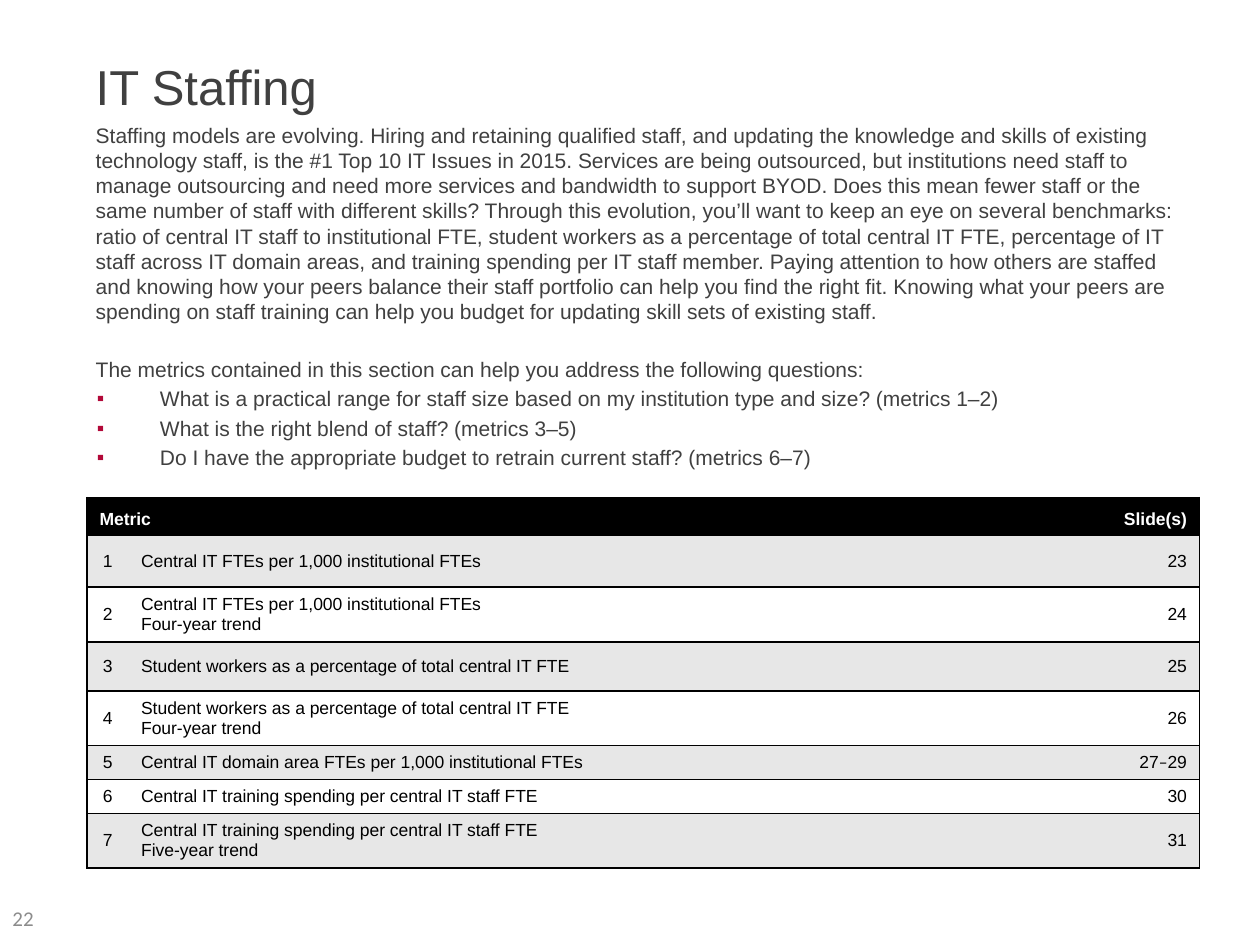
from lxml.etree import SubElement
from pptx import Presentation
from pptx.dml.color import RGBColor
from pptx.enum.text import MSO_ANCHOR as Anchor, MSO_AUTO_SIZE as AutoSize, PP_ALIGN as Align
from pptx.oxml import parse_xml
from pptx.oxml.ns import nsdecls, qn
from pptx.util import Inches, Pt


def add_run(paragraph, text, size, color, font="Arial", bold=False):
    run = paragraph.add_run()
    run.text = text
    run.font.size, run.font.name, run.font.bold = Pt(size), font, bold
    run.font.color.rgb = RGBColor.from_string(color)


def set_borders(cell, sides):
    properties = cell._tc.get_or_add_tcPr()
    for side in "LRTB":
        paint = '<a:solidFill><a:srgbClr val="000000"/></a:solidFill>' if side in sides else "<a:noFill/>"
        properties.append(parse_xml(f'<a:ln{side} {nsdecls("a")} w="{Pt(1)}">{paint}</a:ln{side}>'))


DARK, BLACK, WHITE, BAND = "404040", "000000", "FFFFFF", "E7E7E7"

presentation = Presentation()
presentation.slide_width, presentation.slide_height = Inches(10), Inches(7.5)
slide = presentation.slides.add_slide(presentation.slide_layouts[1])
title, body = slide.placeholders

# Title
title.left, title.top, title.width, title.height = map(Inches, (0.66, 0.37, 8.77, 0.63))
title.text_frame.auto_size = AutoSize.NONE
title.text_frame.vertical_anchor = Anchor.MIDDLE
title.text_frame.paragraphs[0].alignment = Align.LEFT
add_run(title.text_frame.paragraphs[0], "IT Staffing", 28, DARK)

# Body: two plain paragraphs, then the bulleted questions
body.left, body.top, body.width, body.height = map(Inches, (0.66, 0.92, 8.84, 5.31))
body.text_frame.auto_size = AutoSize.NONE
intro_sentences = [
    "Staffing models are evolving.",
    "Hiring and retaining qualified staff, and updating the knowledge and skills of existing "
    "technology staff, is the #1 Top 10 IT Issues in 2015.",
    "Services are being outsourced, but institutions need staff to manage outsourcing and need "
    "more services and bandwidth to support BYOD.",
    "Does this mean fewer staff or the same number of staff with different skills?",
    "Through this evolution, you’ll want to keep an eye on several benchmarks: ratio of central IT "
    "staff to institutional FTE, student workers as a percentage of total central IT FTE, percentage "
    "of IT staff across IT domain areas, and training spending per IT staff member.",
    "Paying attention to how others are staffed and knowing how your peers balance their staff "
    "portfolio can help you find the right fit.",
    "Knowing what your peers are spending on staff training can help you budget for updating "
    "skill sets of existing staff.",
]
body_paragraphs = [  # text, space before, bulleted
    (" ".join(intro_sentences), 0, False),
    ("The metrics contained in this section can help you address the following questions:", 18.6, False),
    ("What is a practical range for staff size based on my institution type and size? (metrics 1–2)", 2.4, True),
    ("What is the right blend of staff? (metrics 3–5)", 2.4, True),
    ("Do I have the appropriate budget to retrain current staff? (metrics 6–7)", 2.4, True),
]
for index, (text, space, bulleted) in enumerate(body_paragraphs):
    paragraph = body.text_frame.paragraphs[0] if index == 0 else body.text_frame.add_paragraph()
    paragraph.space_before = Pt(space)
    properties = paragraph._p.get_or_add_pPr()
    properties.set("marL", str(Inches(0.51 if bulleted else 0)))
    properties.set("indent", str(Inches(-0.5 if bulleted else 0)))
    if bulleted:
        bullet_color = SubElement(properties, qn("a:buClr"))
        SubElement(bullet_color, qn("a:srgbClr"), val="B20838")
        SubElement(properties, qn("a:buFont"), typeface="Arial")
        SubElement(properties, qn("a:buChar"), char="▪")
    else:
        SubElement(properties, qn("a:buNone"))
    add_run(paragraph, text, 12, DARK)

# Slide number
number_box = slide.shapes.add_textbox(0, Inches(7.08), Inches(1.08), Inches(0.42))
number_box.text_frame.word_wrap = True
number_box.text_frame.vertical_anchor = Anchor.MIDDLE
add_run(number_box.text_frame.paragraphs[0], "22", 12, "8C8C8C", "Calibri")

# Metrics table
central = "Central IT FTEs per 1,000 institutional FTEs"
students = "Student workers as a percentage of total central IT FTE"
training = "Central IT training spending per central IT staff FTE"
metrics = [  # description lines, slides, row height
    ([central], "23", 0.41),
    ([central, "Four-year trend"], "24", 0.41),
    ([students], "25", 0.39),
    ([students, "Four-year trend"], "26", 0.41),
    (["Central IT domain area FTEs per 1,000 institutional FTEs"], "27–29", 0.27),
    ([training], "30", 0.26),
    ([training, "Five-year trend"], "31", 0.41),
]
rows = [(["Metric"], [], ["Slide(s)"], 0.3)]
rows += [([str(number)], lines, [slides], height)
         for number, (lines, slides, height) in enumerate(metrics, 1)]
columns = [0.33, 7.78, 0.72]
table = slide.shapes.add_table(len(rows), len(columns), Inches(0.69), Inches(3.95),
                               Inches(sum(columns)), Inches(sum(row[-1] for row in rows))).table
for column, width in zip(table.columns, columns):
    column.width = Inches(width)
table.cell(0, 0).merge(table.cell(0, 1))

for row_index, (*contents, height) in enumerate(rows):
    header = row_index == 0
    table.rows[row_index].height = Inches(height)
    for column_index, lines in enumerate(contents):
        cell = table.cell(row_index, column_index)
        set_borders(cell, ("LTB", "TB", "RTB")[column_index])
        cell.fill.solid()
        fill = BLACK if header else BAND if row_index % 2 else WHITE
        cell.fill.fore_color.rgb = RGBColor.from_string(fill)
        cell.vertical_anchor = Anchor.BOTTOM if header else Anchor.MIDDLE
        for line_index, line in enumerate(lines):
            paragraph = cell.text_frame.paragraphs[0] if line_index == 0 else cell.text_frame.add_paragraph()
            paragraph.alignment = (Align.LEFT if header else Align.CENTER, Align.LEFT, Align.RIGHT)[column_index]
            for part in line.partition("–"):
                if part:
                    add_run(paragraph, part, 10, WHITE if header else BLACK,
                            "Calibri" if part == "–" else "Arial", header)

presentation.save("out.pptx")
